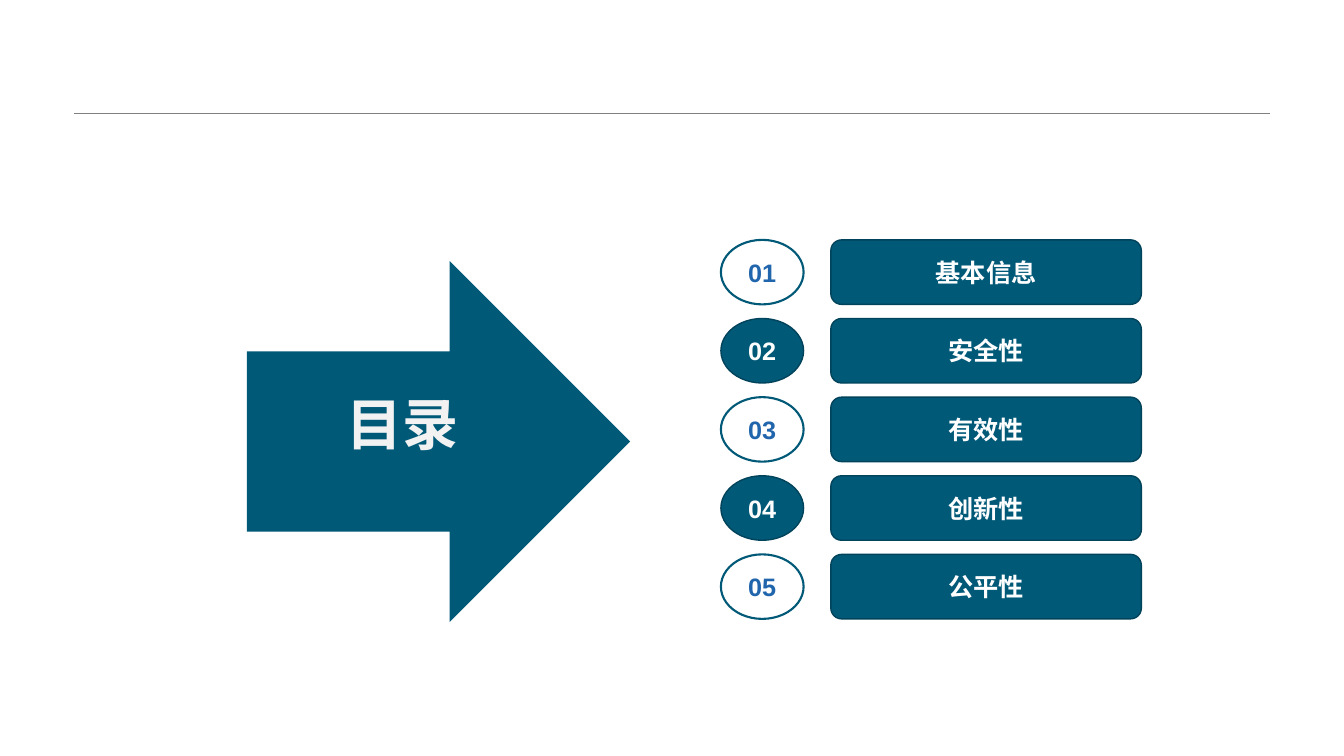
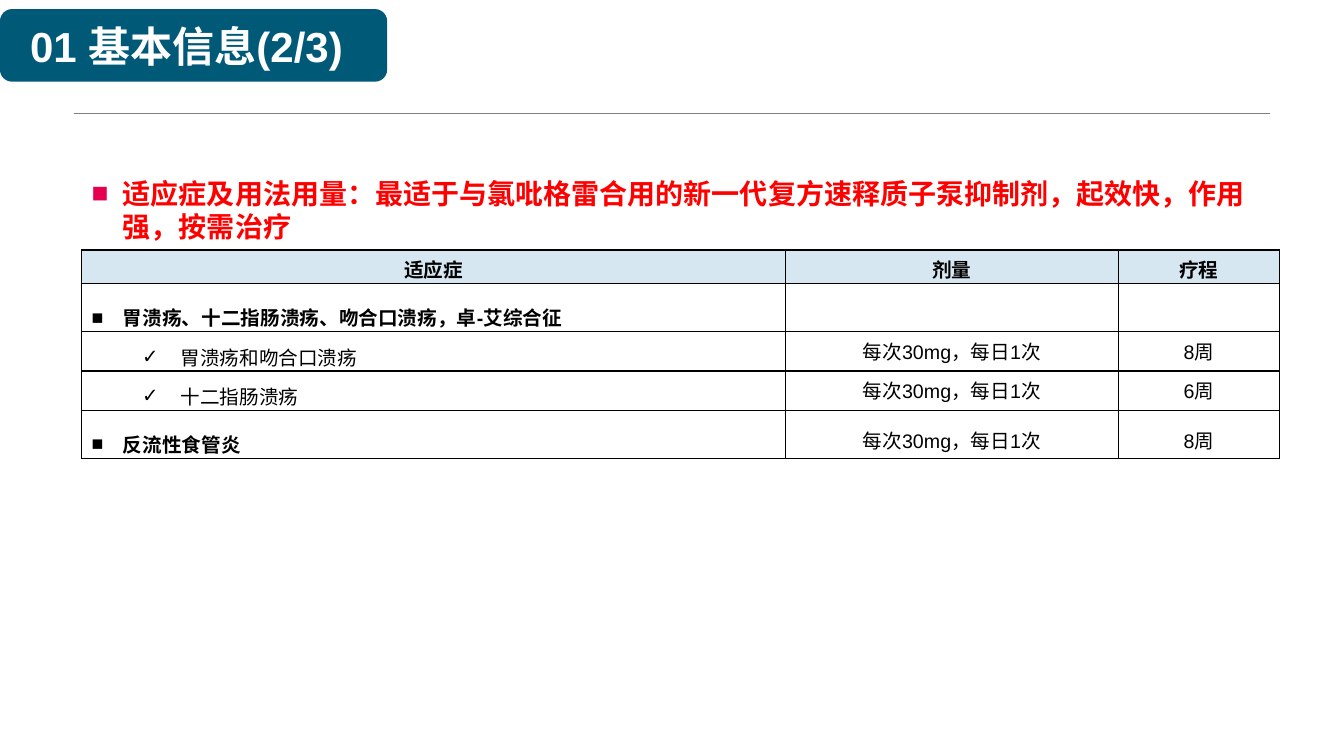
from lxml.etree import SubElement
from pptx import Presentation
from pptx.dml.color import RGBColor
from pptx.enum.shapes import MSO_CONNECTOR, MSO_SHAPE
from pptx.enum.text import MSO_ANCHOR, PP_ALIGN
from pptx.oxml.ns import qn
from pptx.util import Inches, Pt

COLORS = {
    "teal": "015978", "teal_edge": "01435A", "blue": "2165AC", "white": "FFFFFF",
    "pale": "F2F2F2", "gray": "808080", "black": "000000", "red": "FF0000",
    "pink": "E50150", "header": "D6E7F1",
}
FONT = "Arial"

CONTENTS_TITLE = "目录"
CONTENTS = ["基本信息", "安全性", "有效性", "创新性", "公平性"]

SECTION_TITLE = "01 基本信息(2/3)"
KEY_MESSAGE = "适应症及用法用量：最适于与氯吡格雷合用的新一代复方速释质子泵抑制剂，起效快，作用强，按需治疗"
TABLE_HEADER = ("适应症", "剂量", "疗程")
DOSE = "每次30mg，每日1次"
# Each row: outline level, indication, dose, course
TABLE_ROWS = [
    (0, "胃溃疡、十二指肠溃疡、吻合口溃疡，卓-艾综合征", "", ""),
    (1, "胃溃疡和吻合口溃疡", DOSE, "8周"),
    (1, "十二指肠溃疡", DOSE, "6周"),
    (0, "反流性食管炎", DOSE, "8周"),
]
COLUMN_WIDTHS = (6.98, 3.3, 1.6)
HEADER_HEIGHT = 0.33
LEVELS = [
    {"bullet": "■", "margin": 0.31, "hang": 0.31, "spacing": 1.5, "bold": True, "height": 0.46},
    {"bullet": "✓", "margin": 0.88, "hang": 0.38, "spacing": 1.2, "bold": False, "height": 0.38},
]


def rgb(name):
    return RGBColor.from_string(COLORS[name])


def write(frame, text, size, color, bold=True, align=PP_ALIGN.LEFT, spacing=None):
    frame.word_wrap = True
    para = frame.paragraphs[0]
    para.text = text
    para.alignment = align
    para.line_spacing = spacing
    para.font.name = FONT
    para.font.size = Pt(size)
    para.font.bold = bold
    para.font.color.rgb = rgb(color)
    return para


def add_bullet(para, bullet, margin, hang, color):
    properties = para._p.get_or_add_pPr()
    properties.set("marL", str(Inches(margin)))
    properties.set("indent", str(-Inches(hang)))
    bullet_color = SubElement(properties, qn("a:buClr"))
    SubElement(bullet_color, qn("a:srgbClr"), val=COLORS[color])
    SubElement(properties, qn("a:buFont"), typeface=FONT)
    SubElement(properties, qn("a:buChar"), char=bullet)


def add_block(page, kind, left, top, width, height, fill=None, line=None, line_width=1):
    block = page.shapes.add_shape(kind, Inches(left), Inches(top), Inches(width), Inches(height))
    block.shadow.inherit = False
    if fill:
        block.fill.solid()
        block.fill.fore_color.rgb = rgb(fill)
    else:
        block.fill.background()
    if line:
        block.line.color.rgb = rgb(line)
        block.line.width = Pt(line_width)
    else:
        block.line.fill.background()
    block.text_frame.vertical_anchor = MSO_ANCHOR.MIDDLE
    return block


def add_text(page, left, top, width, height, *text_style):
    box = page.shapes.add_textbox(Inches(left), Inches(top), Inches(width), Inches(height))
    return write(box.text_frame, *text_style)


def new_page(deck):
    """Add a blank slide with the rule that all slides share."""
    page = deck.slides.add_slide(deck.slide_layouts[6])
    rule = page.shapes.add_connector(
        MSO_CONNECTOR.STRAIGHT, Inches(0.73), Inches(1.12), Inches(12.6), Inches(1.12))
    rule.line.color.rgb = rgb("gray")
    rule.line.width = Pt(0.25)
    SubElement(rule._element.spPr, qn("a:effectLst"))
    return page


def add_borders(cell):
    properties = cell._tc.get_or_add_tcPr()
    for side in ("lnL", "lnR", "lnT", "lnB"):
        border = SubElement(properties, qn(f"a:{side}"), w=str(Pt(1)))
        fill = SubElement(border, qn("a:solidFill"))
        SubElement(fill, qn("a:srgbClr"), val=COLORS["black"])


def style_cell(cell, fill=None, anchor=MSO_ANCHOR.TOP):
    add_borders(cell)
    if fill:
        cell.fill.solid()
        cell.fill.fore_color.rgb = rgb(fill)
    else:
        cell.fill.background()
    cell.margin_top, cell.margin_bottom = Inches(0.05), 0
    cell.vertical_anchor = anchor


def add_dosage_table(page, left, top):
    heights = [HEADER_HEIGHT] + [LEVELS[row[0]]["height"] for row in TABLE_ROWS]
    frame = page.shapes.add_table(
        len(heights), len(COLUMN_WIDTHS), Inches(left), Inches(top),
        Inches(sum(COLUMN_WIDTHS)), Inches(sum(heights)))
    table = frame.table
    for column, width in zip(table.columns, COLUMN_WIDTHS):
        column.width = Inches(width)
    for row, height in zip(table.rows, heights):
        row.height = Inches(height)

    for column, heading in enumerate(TABLE_HEADER):
        cell = table.cell(0, column)
        style_cell(cell, "header")
        write(cell.text_frame, heading, 14, "black", align=PP_ALIGN.CENTER)

    for row, (level, indication, *details) in enumerate(TABLE_ROWS, start=1):
        style = LEVELS[level]
        cell = table.cell(row, 0)
        style_cell(cell, anchor=MSO_ANCHOR.MIDDLE)
        para = write(cell.text_frame, indication, 14, "black", style["bold"],
                     spacing=style["spacing"])
        add_bullet(para, style["bullet"], style["margin"], style["hang"], "black")
        for column, detail in enumerate(details, start=1):
            cell = table.cell(row, column)
            style_cell(cell, anchor=MSO_ANCHOR.TOP if level else MSO_ANCHOR.MIDDLE)
            write(cell.text_frame, detail, 14, "black", False, PP_ALIGN.CENTER,
                  None if level else 1.2)


def build_contents(deck):
    page = new_page(deck)
    add_block(page, MSO_SHAPE.RIGHT_ARROW, 2.45, 2.59, 3.8, 3.58, "teal")
    add_text(page, 3.34, 3.82, 1.48, 0.77, CONTENTS_TITLE, 40, "pale")

    first_top, pitch, height = 2.38, 0.78, 0.64
    for index, topic in enumerate(CONTENTS):
        top = first_top + index * pitch
        if index % 2:
            look, number_color = ("teal", "teal_edge", 1), "white"
        else:
            look, number_color = (None, "teal", 1.5), "blue"
        badge = add_block(page, MSO_SHAPE.OVAL, 7.15, top, 0.82, height, *look)
        write(badge.text_frame, f"{index + 1:02}", 18, number_color, align=PP_ALIGN.CENTER)
        bar = add_block(page, MSO_SHAPE.ROUNDED_RECTANGLE, 8.24, top, 3.08, height,
                        "teal", "teal_edge")
        write(bar.text_frame, topic, 18, "white", align=PP_ALIGN.CENTER)


def build_dosage(deck):
    page = new_page(deck)
    banner = add_block(page, MSO_SHAPE.ROUNDED_RECTANGLE, 0, 0.09, 3.84, 0.72, "teal")
    banner.text_frame.margin_right = Inches(0.24)
    write(banner.text_frame, SECTION_TITLE, 30, "white", align=PP_ALIGN.CENTER)

    add_dosage_table(page, 0.81, 2.48)
    message = add_text(page, 0.81, 1.7, 11.88, 0.77, KEY_MESSAGE, 20, "red")
    add_bullet(message, "■", 0.31, 0.31, "pink")


def main():
    deck = Presentation()
    deck.slide_width, deck.slide_height = Inches(13.33), Inches(7.5)
    build_contents(deck)
    build_dosage(deck)
    deck.save("out.pptx")


if __name__ == "__main__":
    main()
